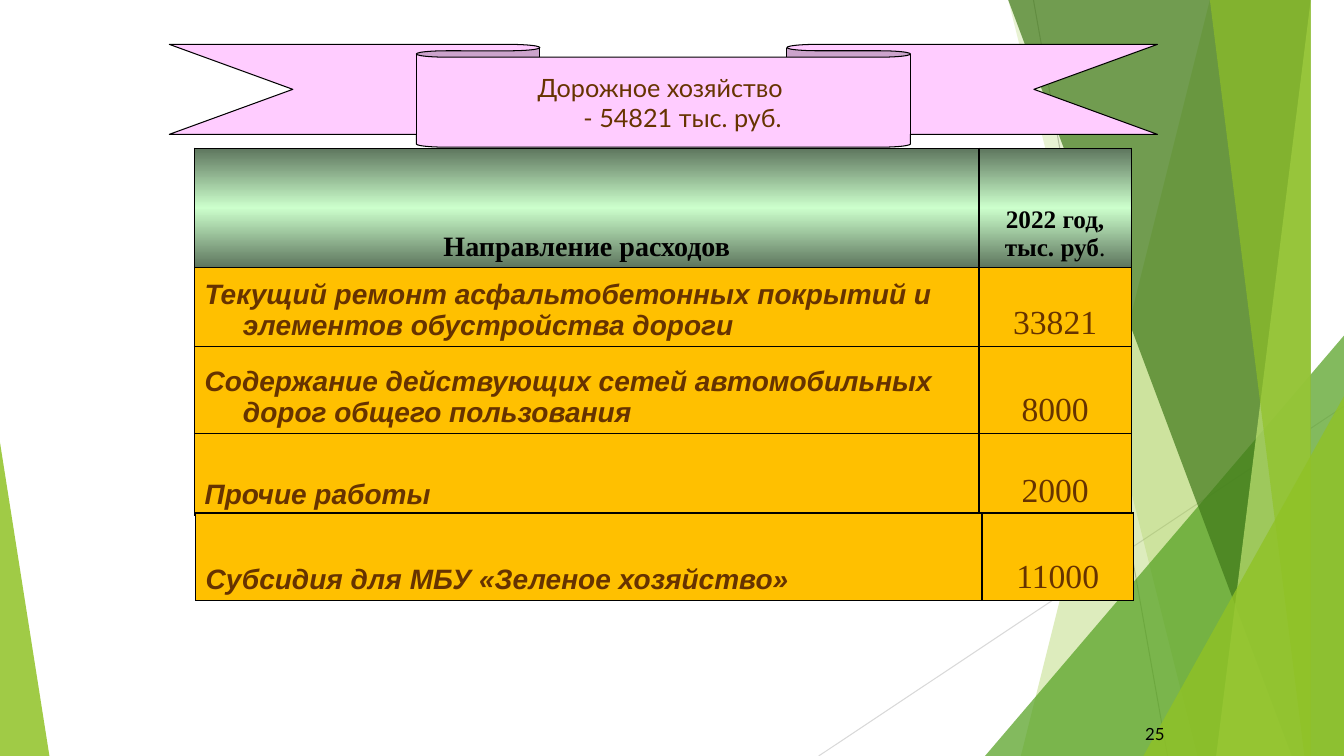
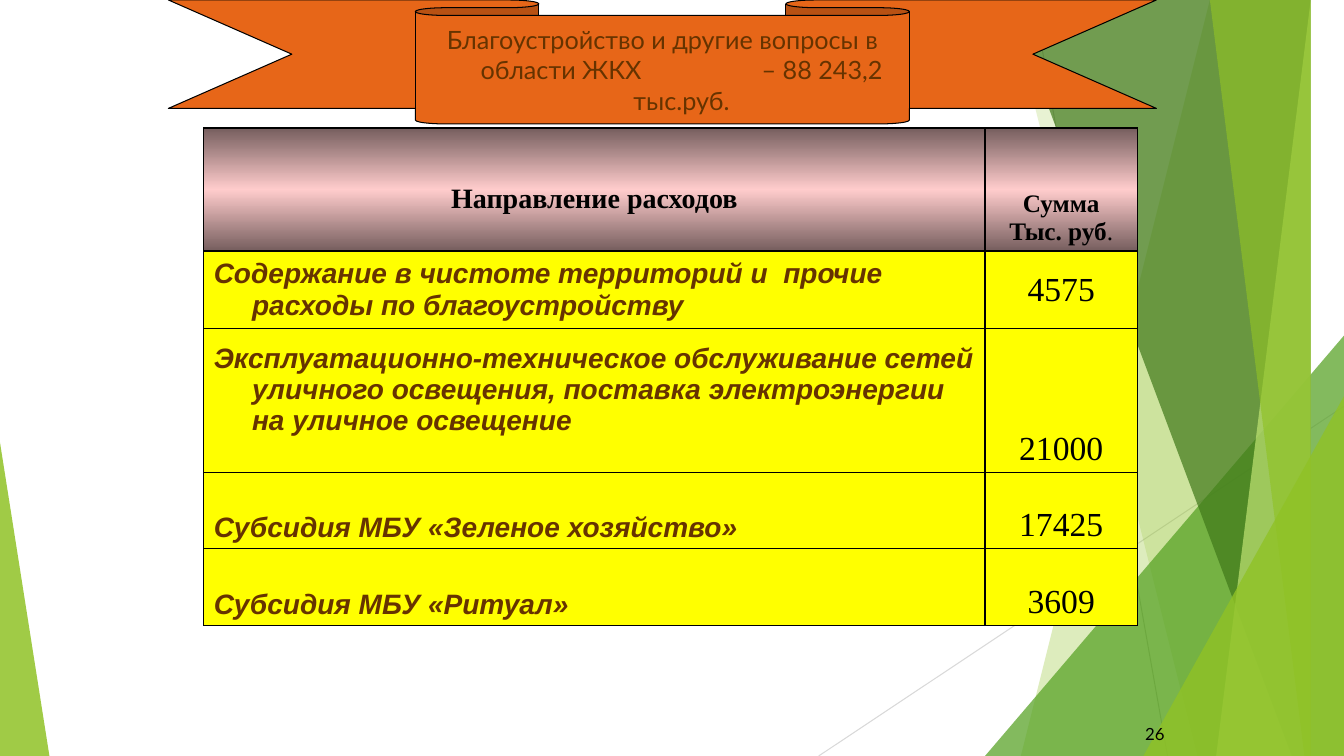
import copy
from dataclasses import dataclass
from typing import Optional, Union

import pptx
import pptx.dml.color
import pptx.enum.shapes
import pptx.enum.text
import pptx.oxml
import pptx.oxml.ns
import pptx.util

Inches = pptx.util.Inches
qn = pptx.oxml.ns.qn
ALIGN = pptx.enum.text.PP_ALIGN
ANCHOR = pptx.enum.text.MSO_ANCHOR
SHAPE = pptx.enum.shapes.MSO_SHAPE

# Shared look
WIDTH, HEIGHT = 13.33, 7.5
HANGING = 0.38
COLORS = {
    "black": "000000", "brown": "663300", "lime": "90C226", "leaf": "54A021",
    "forest": "3F7819", "pale": "C0E474", "gray": "BFBFBF", "silver": "D9D9D9",
    "pink": "FFCCFF", "orange": "E76618", "gold": "FFC000", "yellow": "FFFF00",
    "mint": "CCFFCC", "dark mint": "5E765E", "rose": "FFCCCC", "dark rose": "765E5E",
}
STYLES = {
    "title": {"name": "Lato", "size": pptx.util.Pt(18), "bold": False},
    "number": {"name": "Lato", "size": pptx.util.Pt(12)},
    "heading": {"name": "Times New Roman", "size": pptx.util.Pt(20), "bold": True},
    "unit": {"name": "Times New Roman", "size": pptx.util.Pt(18), "bold": True},
    "point": {"name": "Times New Roman", "size": pptx.util.Pt(18), "bold": False},
    "label": {"name": "Arial", "size": pptx.util.Pt(20), "bold": True, "italic": True},
    "amount": {"name": "Times New Roman", "size": pptx.util.Pt(24), "bold": False},
}


@dataclass
class Span:
    text: str
    style: str
    color: str = "black"
    spacing: int = 0  # hundredths of a point


@dataclass
class Slant:
    """Facet reaching from the top to the bottom of the right edge."""
    top_x: float
    bottom_x: float
    color: str
    opacity: int


@dataclass
class Corner:
    """Right-angled triangle standing on the bottom edge."""
    left: float
    top: float
    width: float
    lean: float
    color: str
    opacity: int


@dataclass
class Entry:
    label: str
    amount: str
    height: float
    anchor: ANCHOR = ANCHOR.BOTTOM
    lift: float = 0.05


@dataclass
class Header:
    unit: list[str]
    height: float
    color: str
    lift: float = 0.05


@dataclass
class Spending:
    left: float
    top: float
    widths: tuple[float, float]
    color: str
    amount_color: str
    entries: list[Entry]
    header: Optional[Header] = None


@dataclass
class Topic:
    number: str
    title: list[Span]
    ribbon: tuple[float, float, float, float]
    ribbon_color: str
    tables: list[Spending]


FACETS: list[Union[Slant, Corner]] = [
    Slant(12.28, 10.04, "lime", 30),
    Slant(10.5, 11.83, "lime", 20),
    Corner(9.77, 3.33, 3.56, 1, "leaf", 72),
    Slant(10.21, 12.91, "forest", 70),
    Slant(13.03, 11.92, "pale", 70),
    Slant(11.96, 13.18, "lime", 65),
    Corner(11.34, 3.93, 1.99, 1, "lime", 80),
    Corner(0, 4.39, 0.49, 0, "lime", 85),
]
RAYS = [((10.25, 0), (11.58, HEIGHT), "gray"), ((WIDTH, 4.03), (8.12, HEIGHT), "silver")]

TOPICS = [
    Topic(
        "25",
        [Span("Дорожное хозяйство ", "title", "brown"), Span("\n", "title"),
         Span("- 54821 тыс. руб.", "title", "brown")],
        (1.68, 0.44, 9.8, 1.02), "pink",
        [
            Spending(1.93, 1.47, (7.78, 1.51), "gold", "brown", [
                Entry("Текущий ремонт асфальтобетонных покрытий и элементов "
                      "обустройства дороги", "33821", 0.79),
                Entry("Содержание действующих сетей автомобильных дорог общего "
                      "пользования", "8000", 0.86),
                Entry("Прочие работы", "2000", 0.81),
            ], Header(["2022 год,", "тыс. руб"], 1.18, "mint")),
            Spending(1.94, 5.09, (7.8, 1.5), "gold", "brown", [
                Entry("Субсидия для МБУ «Зеленое хозяйство»", "11000", 0.87),
            ]),
        ],
    ),
    Topic(
        "26",
        [Span("Благоустройство и другие вопросы в области ЖКХ", "title", "brown"),
         Span(" ", "title", "brown", 8100),
         Span("– 88 243,2 тыс.руб.", "title", "brown")],
        (1.67, 0, 9.8, 1.23), "orange",
        [
            Spending(2.02, 1.27, (7.75, 1.51), "yellow", "black", [
                Entry("Содержание в чистоте территорий и  прочие расходы по "
                      "благоустройству", "4575", 0.77, ANCHOR.MIDDLE),
                Entry("Эксплуатационно-техническое обслуживание сетей уличного "
                      "освещения, поставка электроэнергии на уличное освещение",
                      "21000", 1.43, lift=0.36),
                Entry("Субсидия МБУ «Зеленое хозяйство»", "17425", 0.75),
                Entry("Субсидия МБУ «Ритуал»", "3609", 0.77),
            ], Header(["Сумма", "Тыс. руб"], 1.22, "rose", lift=0.36)),
        ],
    ),
]


def rgb(color: str) -> pptx.dml.color.RGBColor:
    return pptx.dml.color.RGBColor.from_string(COLORS[color])


def drawing_xml(tag: str, attributes: str, content: str):
    return pptx.oxml.parse_xml(
        f'<a:{tag} {pptx.oxml.ns.nsdecls("a")} {attributes}>{content}</a:{tag}>')


def solid_xml(color: str) -> str:
    return f'<a:solidFill><a:srgbClr val="{COLORS[color]}"/></a:solidFill>'


# Text
def write(frame, paragraphs: list[list[Span]], align=ALIGN.CENTER) -> None:
    frame.word_wrap = True
    for index, spans in enumerate(paragraphs):
        para = frame.add_paragraph() if index else frame.paragraphs[0]
        para.alignment = align
        for span in spans:
            if span.text == "\n":
                para.add_line_break()
                continue
            run = para.add_run()
            run.text = span.text
            for key, value in STYLES[span.style].items():
                setattr(run.font, key, value)
            run.font.color.rgb = rgb(span.color)


def space_letters(shape, spans: list[Span]) -> None:
    texts = [span for span in spans if span.text != "\n"]
    for properties, span in zip(shape.element.iter(qn("a:rPr")), texts):
        if span.spacing:
            properties.set("spc", str(span.spacing))


def hang_paragraphs(page) -> None:
    """Give every paragraph the hanging indent; size breaks like their text."""
    for para in page.element.iter(qn("a:p")):
        properties = para.get_or_add_pPr()
        properties.set("marL", str(Inches(HANGING)))
        properties.set("indent", str(-Inches(HANGING)))
    for line_break in page.element.iter(qn("a:br")):
        line_break.append(copy.deepcopy(line_break.getprevious().find(qn("a:rPr"))))


# Background, drawn once and kept in the layout
def draw_facet(page, facet: Union[Slant, Corner]):
    if isinstance(facet, Slant):
        builder = page.shapes.build_freeform(facet.top_x, -0.01, scale=float(Inches(1)))
        builder.add_line_segments(
            [(WIDTH, -0.01), (WIDTH, HEIGHT), (facet.bottom_x, HEIGHT)], close=True)
        shape = builder.convert_to_shape()
    else:
        shape = page.shapes.add_shape(
            SHAPE.ISOSCELES_TRIANGLE, Inches(facet.left), Inches(facet.top),
            Inches(facet.width), Inches(HEIGHT - facet.top))
        shape.adjustments[0] = facet.lean
    shape.shadow.inherit = False
    shape.fill.solid()
    shape.fill.fore_color.rgb = rgb(facet.color)
    shape.line.fill.background()
    for color in shape.element.spPr.iter(qn("a:srgbClr")):
        color.append(drawing_xml("alpha", f'val="{facet.opacity * 1000}"', ""))
    return shape


def draw_ray(page, start: tuple, end: tuple, color: str):
    ray = page.shapes.add_connector(
        pptx.enum.shapes.MSO_CONNECTOR.STRAIGHT, *map(Inches, start + end))
    ray.line.color.rgb = rgb(color)
    ray.line.width = pptx.util.Pt(0.75)
    ray.element.spPr.append(drawing_xml("effectLst", "", ""))
    return ray


def move_background(page, layout) -> None:
    tree = layout.placeholders[0].element.getparent()
    for holder in list(layout.placeholders)[1:]:
        tree.remove(holder.element)
    drawn = [draw_ray(page, *ray) for ray in RAYS]
    drawn += [draw_facet(page, facet) for facet in FACETS]
    for position, shape in enumerate(drawn, start=2):
        tree.insert(position, shape.element)


# Slide elements
def draw_title(page, topic: Topic) -> None:
    left, top, width, height = topic.ribbon
    ribbon = page.shapes.add_shape(SHAPE.DOWN_RIBBON, *map(Inches, topic.ribbon))
    ribbon.adjustments[0], ribbon.adjustments[1] = 0.125, 0.5
    ribbon.shadow.inherit = False
    ribbon.fill.solid()
    ribbon.fill.fore_color.rgb = rgb(topic.ribbon_color)
    ribbon.line.color.rgb = rgb("black")
    ribbon.line.width = pptx.util.Pt(0.75)
    title = page.shapes.title
    title.left, title.top = Inches(left + width / 4), Inches(top + height / 8)
    title.width, title.height = Inches(width / 2), Inches(height * 7 / 8)
    title.text_frame.auto_size = pptx.enum.text.MSO_AUTO_SIZE.NONE
    title.text_frame.vertical_anchor = ANCHOR.MIDDLE
    write(title.text_frame, [topic.title])
    space_letters(title, topic.title)
    ribbon.element.addnext(title.element)


def draw_table(page, spending: Spending) -> None:
    header = spending.header
    heights = [header.height] if header else []
    heights += [entry.height for entry in spending.entries]
    frame = page.shapes.add_table(
        len(heights), 2, Inches(spending.left), Inches(spending.top),
        Inches(sum(spending.widths)), Inches(sum(heights)))
    table = frame.table
    table.first_row = table.horz_banding = False
    for column, width in zip(table.columns, spending.widths):
        column.width = Inches(width)
    for row, height in zip(table.rows, heights):
        row.height = Inches(height)
    rows = list(table.rows)

    if header:
        heading, unit = rows.pop(0).cells
        write(heading.text_frame, [[Span("Направление расходов", "heading")]])
        lines = [[Span(line, "unit")] for line in header.unit]
        lines[-1].append(Span(".", "point"))
        write(unit.text_frame, lines)
        heading.margin_bottom = Inches(header.lift)
        heading.vertical_anchor = unit.vertical_anchor = ANCHOR.BOTTOM
    for row, entry in zip(rows, spending.entries):
        label, amount = row.cells
        write(label.text_frame, [[Span(entry.label, "label", "brown")]], ALIGN.LEFT)
        write(amount.text_frame, [[Span(entry.amount, "amount", spending.amount_color)]])
        label.margin_bottom = Inches(entry.lift)
        for cell in row.cells:
            cell.vertical_anchor = entry.anchor
            cell.fill.solid()
            cell.fill.fore_color.rgb = rgb(spending.color)

    # Header gradient and cell borders
    for index, properties in enumerate(frame.element.iter(qn("a:tcPr"))):
        if header and index < 2:
            ends = COLORS["dark " + header.color]
            stops = "".join(
                f'<a:gs pos="{place}"><a:srgbClr val="{value}"/></a:gs>' for place, value
                in ((0, ends), (50000, COLORS[header.color]), (100000, ends)))
            properties.append(drawing_xml(
                "gradFill", "", f'<a:gsLst>{stops}</a:gsLst><a:lin ang="5400000"/>'))
        for position, side in enumerate("LRTB"):
            properties.insert(position, drawing_xml(
                "ln" + side, 'w="12700"', solid_xml("black")))


def draw_number(page, number: str) -> None:
    box = page.shapes.add_textbox(*map(Inches, (11.08, 7.13, 0.75, 0.3)))
    write(box.text_frame, [[Span(number, "number")]])


def main() -> None:
    deck = pptx.Presentation()
    deck.slide_width, deck.slide_height = Inches(WIDTH), Inches(HEIGHT)
    layout = deck.slide_layouts[5]
    for index, topic in enumerate(TOPICS):
        page = deck.slides.add_slide(layout)
        if index == 0:
            move_background(page, layout)
        for spending in topic.tables:
            draw_table(page, spending)
        draw_title(page, topic)
        draw_number(page, topic.number)
        hang_paragraphs(page)
    deck.save("out.pptx")


if __name__ == "__main__":
    main()
